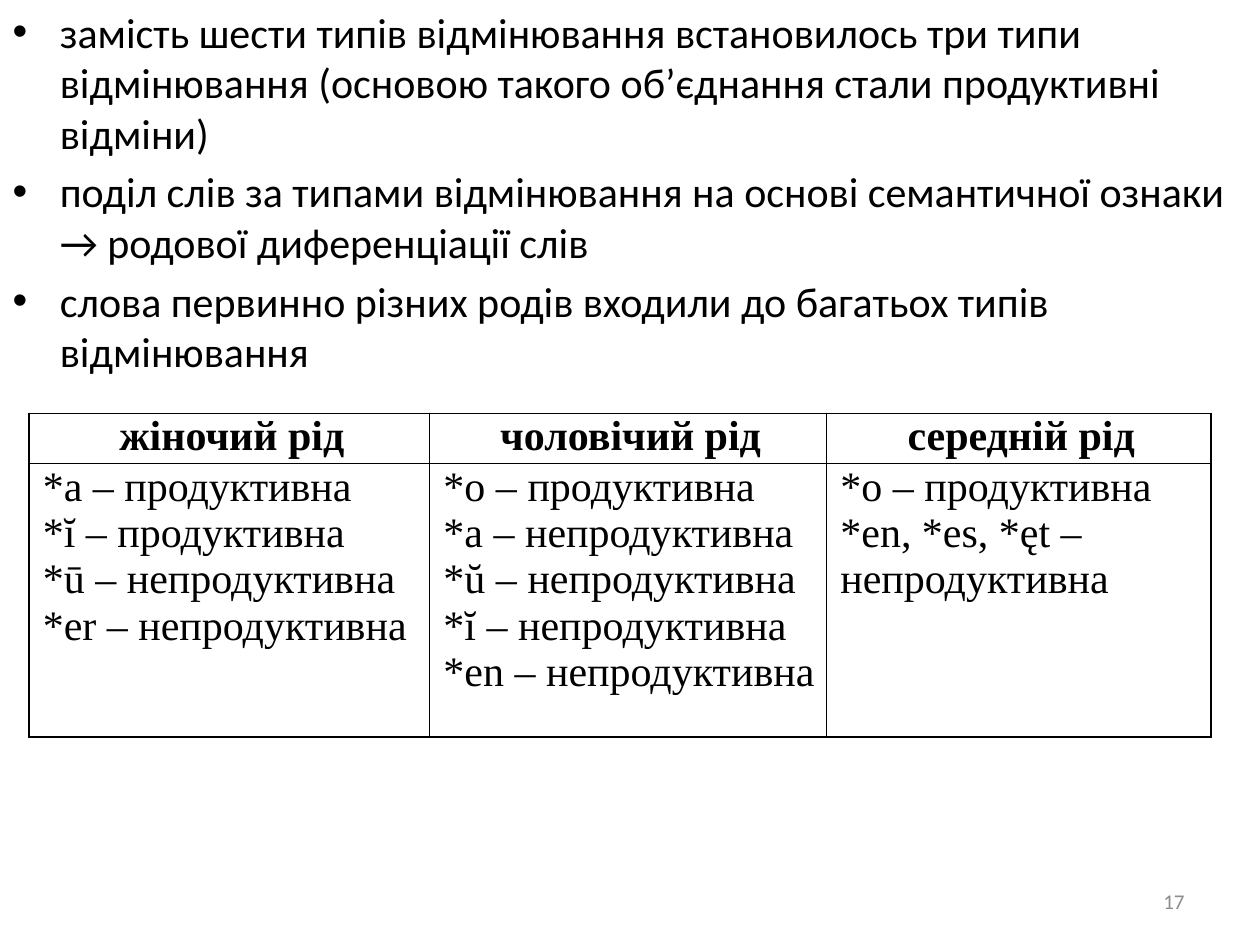
from lxml import etree
from pptx import Presentation, util as u
from pptx.dml.color import RGBColor
from pptx.enum import text
from pptx.oxml import ns

theme = {
    "sans": "Calibri", "serif": "Times New Roman",
    "ink": RGBColor(0, 0, 0), "gray": RGBColor(0x8C, 0x8C, 0x8C),
    "main": 24, "small": 12,
}

points = [
    "замість шести типів відмінювання встановилось три типи відмінювання "
    "(основою такого об’єднання стали продуктивні відміни)",
    "поділ слів за типами відмінювання на основі семантичної ознаки "
    "→ родової диференціації слів",
    "слова первинно різних родів входили до багатьох типів відмінювання",
]
genders = [
    ("жіночий рід", 3.18, ["*а – продуктивна", "*ĭ – продуктивна",
                           "*ū – непродуктивна", "*er – непродуктивна"]),
    ("чоловічий рід", 3.15, ["*о – продуктивна", "*а – непродуктивна",
                             "*ŭ – непродуктивна", "*ĭ – непродуктивна",
                             "*en – непродуктивна"]),
    ("середній рід", 3.05, ["*о – продуктивна", "*en, *es, *ęt – непродуктивна"]),
]


def style(frame, face, size, color, bold=False):
    for para in frame.paragraphs:
        for run in para.runs:
            run.font.name, run.font.size = face, u.Pt(size)
            run.font.color.rgb, run.font.bold = color, bold


def frame_cell(cell):
    props = cell._tc.get_or_add_tcPr()
    for spot, side in enumerate(("lnL", "lnR", "lnT", "lnB")):
        line = etree.Element(ns.qn("a:" + side), w=str(u.Pt(1)))
        fill = etree.SubElement(line, ns.qn("a:solidFill"))
        etree.SubElement(fill, ns.qn("a:srgbClr"), val=str(theme["ink"]))
        props.insert(spot, line)


deck = Presentation()
deck.slide_width, deck.slide_height = u.Inches(10), u.Inches(7.5)
wide, high = deck.slide_width, deck.slide_height
slide = deck.slides.add_slide(deck.slide_layouts[1])
title = slide.shapes.title._element
title.getparent().remove(title)

# Bullet points
body = slide.placeholders[1]
body.left, body.top = 0, 0
body.width, body.height = int(wide * 0.984), int(high * 0.448)
body.text_frame.text = "\n".join(points)
body.text_frame.auto_size = text.MSO_AUTO_SIZE.NONE
style(body.text_frame, theme["sans"], theme["main"], theme["ink"])

# Slide number
num = slide.shapes.add_textbox(u.Inches(7.17), u.Inches(6.95),
                               u.Inches(2.33), u.Inches(0.4))
num.text_frame.text = "17"
num.text_frame.word_wrap = True
num.text_frame.vertical_anchor = text.MSO_ANCHOR.MIDDLE
num.text_frame.paragraphs[0].alignment = text.PP_ALIGN.RIGHT
style(num.text_frame, theme["sans"], theme["small"], theme["gray"])

# Declension table
rows = (0.33, 2.17)
table = slide.shapes.add_table(
    len(rows), len(genders), u.Inches(0.23), u.Inches(3.28),
    u.Inches(sum(g[1] for g in genders)), u.Inches(sum(rows))).table
table.first_row = table.horz_banding = False
for row, size in zip(table.rows, rows):
    row.height = u.Inches(size)
for col, (head, width, forms) in enumerate(genders):
    table.columns[col].width = u.Inches(width)
    for row, lines in enumerate(([head], forms)):
        cell = table.cell(row, col)
        cell.text_frame.text = "\n".join(lines)
        cell.margin_left = cell.margin_right = u.Inches(0.07)
        cell.margin_top = cell.margin_bottom = 0
        cell.fill.background()
        frame_cell(cell)
        style(cell.text_frame, theme["serif"], theme["main"], theme["ink"], row == 0)
        for para in cell.text_frame.paragraphs:
            para.alignment = text.PP_ALIGN.LEFT if row else text.PP_ALIGN.CENTER
            para._p.get_or_add_pPr().set("marL", str(u.Inches(0.04)))

deck.save("out.pptx")
